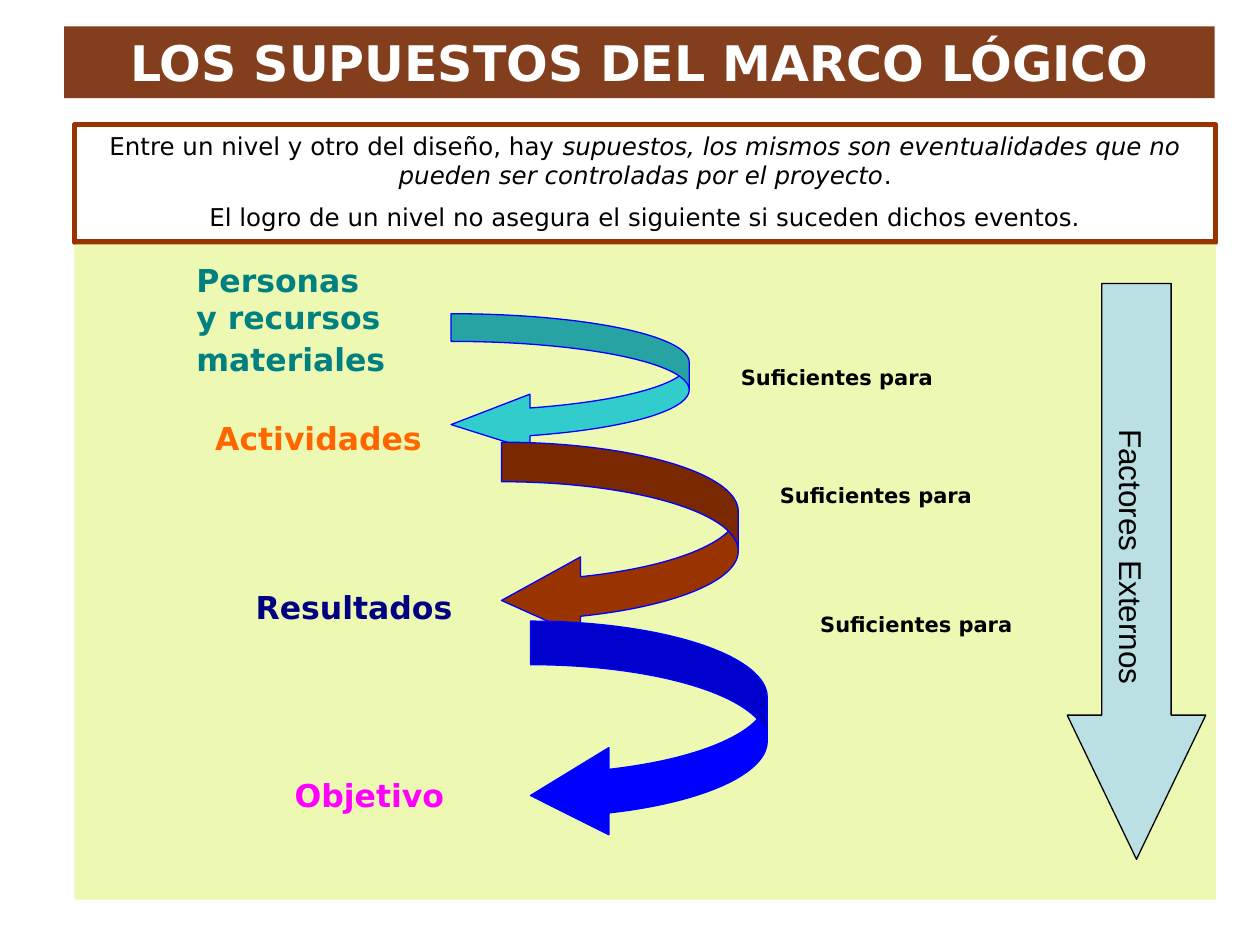
import pptx
import pptx.util
import pptx.dml.color
import pptx.enum.shapes
import pptx.enum.text
import pptx.oxml.ns
import lxml.etree
from dataclasses import dataclass

TITLE = "LOS SUPUESTOS DEL MARCO LÓGICO"
INTRO = [
    ["Entre un nivel y otro del diseño, hay ",
     ("supuestos, los mismos son eventualidades que no pueden ser controladas por el proyecto",
      {"italic": True}),
     "."],
    ["El logro de un nivel no asegura el siguiente si suceden dichos eventos."],
]
LEVELS = [
    ([["Personas"], ["y recursos materiales", (" ", {"size": 20})]],
     "008080", (14.6, 20.2, 18.9, 10.3)),
    ([["Actividades"]], "FF6600", (16.1, 32.8, 24.4, 4)),
    ([["Resultados"]], "000080", (19.3, 46.2, 20.5, 7.5)),
    ([["Objetivo"]], "FF00FF", (22.4, 61.1, 18.1, 4)),
]
LINK_TEXT = "Suficientes para"
LINKS = [
    ("33CCCC", (35.8, 24.9, 18.9, 11), 0.57, (56.3, 28.1)),
    ("993300", (39.8, 35.1, 18.8, 15.7), 0.4, (59.4, 37.5)),
    ("0000FF", (42.1, 49.3, 18.8, 17.3), 0.36, (62.6, 47.7)),
]
LINK_SIZE = (20, 2.8)
FACTORS = "Factores Externos"

TITLE_AREA = (5.1, 2.1, 91.3, 5.7)
INTRO_AREA = (5.9, 9.9, 90.6, 9.3)
PANEL_AREA = (5.9, 19.4, 90.6, 52)
FACTORS_ARROW = (84.7, 22.5, 11, 45.7)
FACTORS_AREA = (76.8, 42.2, 26, 4)
COLUMNS, ROWS = 100, 75


@dataclass(frozen=True)
class Theme:
    font: str = "DejaVu Sans"
    factors_font: str = "Arial"
    title_size: int = 28
    level_size: int = 18
    intro_size: int = 14
    link_size: int = 12
    ink: str = "000000"
    paper: str = "FFFFFF"
    title_fill: str = "833F1D"
    intro_border: str = "993300"
    panel: str = "EDF9B3"
    link_border: str = "0000FF"
    factors_fill: str = "BBE0E3"


THEME = Theme()
Shapes = pptx.enum.shapes.MSO_SHAPE
Align = pptx.enum.text.PP_ALIGN
Anchor = pptx.enum.text.MSO_ANCHOR

deck = pptx.Presentation()
deck.slide_width = pptx.util.Inches(10)
deck.slide_height = pptx.util.Inches(7.5)
slide = deck.slides.add_slide(deck.slide_layouts[1])


def rgb(code):
    return pptx.dml.color.RGBColor.from_string(code)


def place(area):
    left, top, width, height = area
    column, row = deck.slide_width / COLUMNS, deck.slide_height / ROWS
    return [round(left * column), round(top * row),
            round(width * column), round(height * row)]


def move(holder, area):
    holder.left, holder.top, holder.width, holder.height = place(area)


def paint(block, fill=None, line=None, weight=0.75):
    if fill:
        block.fill.solid()
        block.fill.fore_color.rgb = rgb(fill)
    else:
        block.fill.background()
    if line:
        block.line.color.rgb = rgb(line)
        block.line.width = pptx.util.Pt(weight)
    else:
        block.line.fill.background()


def add_block(kind, area, adjustments=(), **colours):
    block = slide.shapes.add_shape(kind, *place(area))
    block.shadow.inherit = False
    for index, value in enumerate(adjustments):
        block.adjustments[index] = value
    paint(block, **colours)
    return block


def write(holder, paragraphs, size, color=THEME.ink, font=THEME.font, bold=False,
          align=Align.LEFT, anchor=Anchor.TOP, gap=0, left=0.1, top=0.05):
    frame = holder.text_frame
    frame.word_wrap = True
    frame.auto_size = pptx.enum.text.MSO_AUTO_SIZE.NONE
    frame.vertical_anchor = anchor
    frame.margin_left, frame.margin_top = pptx.util.Inches(left), pptx.util.Inches(top)
    for index, pieces in enumerate(paragraphs):
        paragraph = frame.add_paragraph() if index else frame.paragraphs[0]
        paragraph.alignment = align
        paragraph.space_before = pptx.util.Pt(gap if index else 0)
        for piece in pieces:
            words, changes = (piece, {}) if isinstance(piece, str) else piece
            run = paragraph.add_run()
            run.text = words
            run.font.name = font
            run.font.size = pptx.util.Pt(changes.get("size", size))
            run.font.bold = bold
            run.font.italic = changes.get("italic", False)
            run.font.color.rgb = rgb(color)


def remove_bullets(holder):
    for paragraph in holder.text_frame.paragraphs:
        properties = paragraph._p.get_or_add_pPr()
        properties.set("marL", "0")
        properties.set("indent", "0")
        lxml.etree.SubElement(properties, pptx.oxml.ns.qn("a:buNone"))


def add_text(area, paragraphs, size, **style):
    label = slide.shapes.add_textbox(*place(area))
    write(label, paragraphs, size, **style)
    return label


title = slide.shapes.title
move(title, TITLE_AREA)
paint(title, fill=THEME.title_fill)
write(title, [[TITLE]], THEME.title_size, color=THEME.paper, bold=True,
      align=Align.CENTER, anchor=Anchor.MIDDLE)

intro = slide.placeholders[1]
move(intro, INTRO_AREA)
paint(intro, line=THEME.intro_border, weight=3)
write(intro, INTRO, THEME.intro_size, align=Align.CENTER, gap=7)
remove_bullets(intro)

add_block(Shapes.RECTANGLE, PANEL_AREA, fill=THEME.panel)

for fill, area, head, corner in LINKS:
    add_block(Shapes.CURVED_LEFT_ARROW, area, (0.2, 0.4, head),
              fill=fill, line=THEME.link_border)
    add_text(corner + LINK_SIZE, [[LINK_TEXT]], THEME.link_size,
             bold=True, left=0.25, top=0.08)

for paragraphs, color, area in LEVELS:
    add_text(area, paragraphs, THEME.level_size, color=color, bold=True)

add_block(Shapes.DOWN_ARROW, FACTORS_ARROW, (0.5, 1.04),
          fill=THEME.factors_fill, line=THEME.ink)
factors = add_text(FACTORS_AREA, [[FACTORS]], THEME.level_size,
                   font=THEME.factors_font, align=Align.CENTER)
factors.rotation = 90

deck.save("out.pptx")
